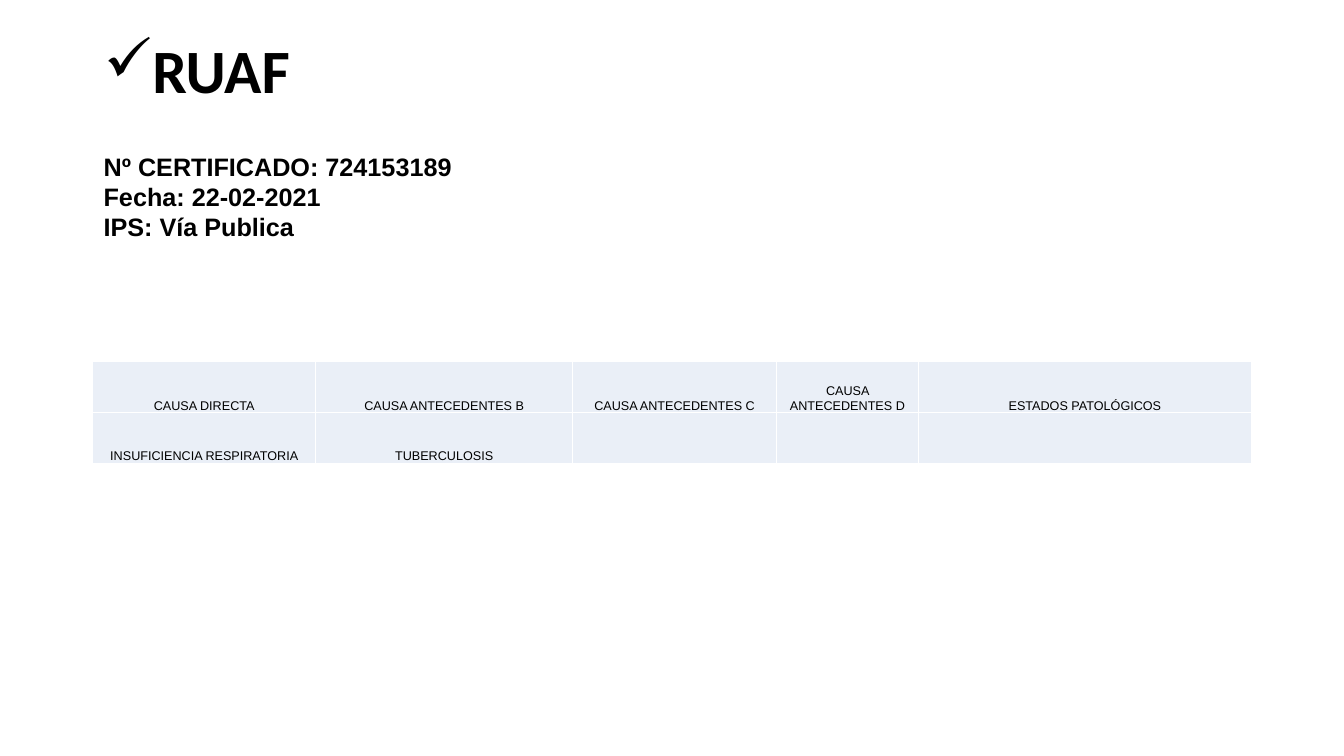
import pptx
import pptx.util
import pptx.oxml
import pptx.oxml.ns
import pptx.dml.color
import pptx.enum.text
import lxml.etree

Inches = pptx.util.Inches
Pt = pptx.util.Pt
Align = pptx.enum.text.PP_ALIGN
Anchor = pptx.enum.text.MSO_ANCHOR
Fit = pptx.enum.text.MSO_AUTO_SIZE
qn = pptx.oxml.ns.qn

BLACK, WHITE, PALE = "000000", "FFFFFF", "EAEFF7"
HEAD = {"name": "Calibri", "size": Pt(44), "bold": True}
BODY = {"name": "Arial", "size": Pt(18), "bold": True}
CELL = {"name": "Arial", "size": Pt(9), "bold": False}
INSET = {
    "vertical_anchor": Anchor.BOTTOM,
    "margin_left": Inches(0.01),
    "margin_right": Inches(0.01),
    "margin_top": Inches(0.01),
    "margin_bottom": 0,
}
FACTS = ["Nº CERTIFICADO: 724153189", "Fecha: 22-02-2021", "IPS: Vía Publica"]
WIDTHS = [2.21, 2.55, 2.02, 1.41, 3.3]
ROWS = [
    ["CAUSA DIRECTA", "CAUSA ANTECEDENTES B", "CAUSA ANTECEDENTES C",
     "CAUSA ANTECEDENTES D", "ESTADOS PATOLÓGICOS"],
    ["INSUFICIENCIA RESPIRATORIA", "TUBERCULOSIS", "", "", ""],
]


def color(code):
    return pptx.dml.color.RGBColor.from_string(code)


def apply(item, values):
    for name, value in values.items():
        setattr(item, name, value)


def write(para, text, font, align=Align.LEFT):
    para.alignment = align
    if text:
        run = para.add_run()
        run.text = text
        apply(run.font, font)
        run.font.color.rgb = color(BLACK)


def place(shape, left, top, width, height):
    apply(shape, {"left": Inches(left), "top": Inches(top),
                  "width": Inches(width), "height": Inches(height)})


def bullet(para, mark, indent):
    props = para._p.get_or_add_pPr()
    props.set("marL", str(Inches(indent)))
    props.set("indent", str(-Inches(indent)))
    lxml.etree.SubElement(props, qn("a:buChar")).set("char", mark)


def add_title(slide, text):
    title = slide.shapes.title
    place(title, 0.93, 0, 11.5, 1.45)
    frame = title.text_frame
    apply(frame, {"vertical_anchor": Anchor.MIDDLE, "word_wrap": True,
                  "auto_size": Fit.NONE})
    para = frame.paragraphs[0]
    write(para, text, HEAD)
    para.line_spacing = 0.9
    bullet(para, "✓", 0.31)


def add_facts(slide, lines):
    box = slide.shapes.add_textbox(0, 0, 0, 0)
    place(box, 0.93, 1.45, 9.5, 1.01)
    frame = box.text_frame
    apply(frame, {"word_wrap": True, "auto_size": Fit.SHAPE_TO_FIT_TEXT})
    for i, line in enumerate(lines):
        para = frame.add_paragraph() if i else frame.paragraphs[0]
        write(para, line, BODY)


def border(cell, code):
    props = cell._tc.get_or_add_tcPr()
    for side in "LRTB":
        line = lxml.etree.SubElement(props, qn("a:ln" + side))
        line.set("w", str(Pt(1)))
        fill = lxml.etree.SubElement(line, qn("a:solidFill"))
        lxml.etree.SubElement(fill, qn("a:srgbClr")).set("val", code)


def add_causes(slide, rows):
    frame = slide.shapes.add_table(
        len(rows), len(WIDTHS), Inches(0.92), Inches(3.59),
        Inches(sum(WIDTHS)), Inches(1.01))
    table = frame.table
    apply(table, {"first_row": False, "horz_banding": False})
    for col, width in zip(table.columns, WIDTHS):
        col.width = Inches(width)
    for r, row in enumerate(rows):
        for c, text in enumerate(row):
            cell = table.cell(r, c)
            apply(cell, INSET)
            border(cell, WHITE)
            cell.fill.solid()
            cell.fill.fore_color.rgb = color(PALE)
            write(cell.text_frame.paragraphs[0], text, CELL, Align.CENTER)


def main():
    deck = pptx.Presentation()
    apply(deck, {"slide_width": Inches(13.33), "slide_height": Inches(7.5)})
    slide = deck.slides.add_slide(deck.slide_layouts[5])
    add_title(slide, "RUAF")
    add_facts(slide, FACTS)
    add_causes(slide, ROWS)
    deck.save("out.pptx")


if __name__ == "__main__":
    main()
